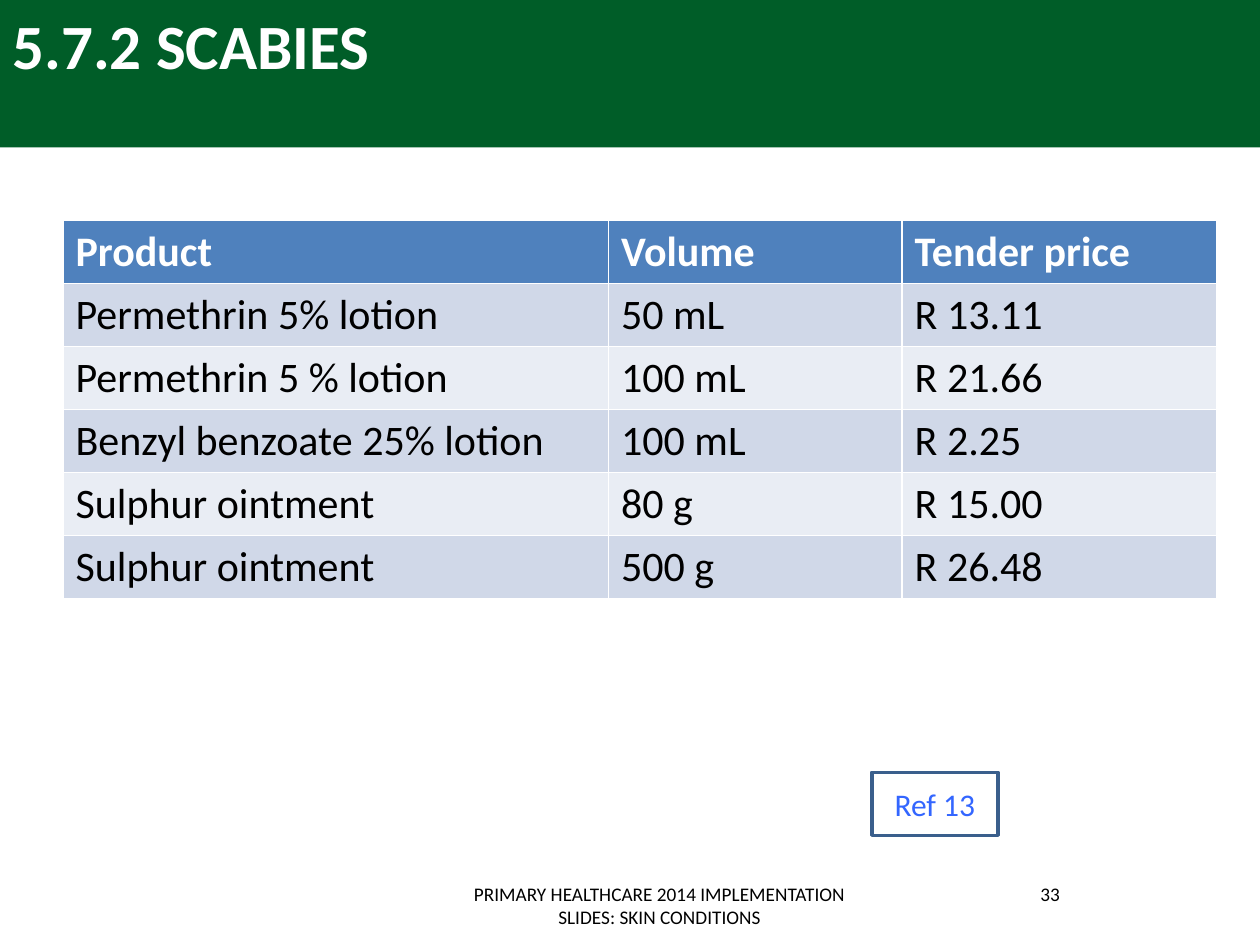
import dataclasses

import pptx
import pptx.dml.color
import pptx.enum.shapes
import pptx.enum.text
import pptx.util

SLIDE_WIDTH, SLIDE_HEIGHT = 10, 7.5
FONT = "Calibri"
COLOURS = {
    "band": "005D28",
    "header": "4F81BD",
    "odd_row": "D0D8E8",
    "even_row": "E9EDF4",
    "outline": "3A5F8C",
    "reference": "3366FF",
    "white": "FFFFFF",
    "black": "000000",
}
ALIGN = pptx.enum.text.PP_ALIGN
ANCHOR = pptx.enum.text.MSO_ANCHOR

COLUMN_WIDTHS = (4.33, 2.33, 2.5)
ROW_HEIGHT = 0.5
PRICES = (
    ("Product", "Volume", "Tender price"),
    ("Permethrin 5% lotion", "50 mL", "R 13.11"),
    ("Permethrin 5 % lotion", "100 mL", "R 21.66"),
    ("Benzyl benzoate 25% lotion", "100 mL", "R 2.25"),
    ("Sulphur ointment", "80 g", "R 15.00"),
    ("Sulphur ointment", "500 g", "R 26.48"),
)


@dataclasses.dataclass(frozen=True)
class Box:
    left: float
    top: float
    width: float
    height: float

    def emu(self) -> tuple:
        return tuple(pptx.util.Inches(value) for value in dataclasses.astuple(self))


@dataclasses.dataclass(frozen=True)
class FooterText:
    text: str
    box: Box


FOOTER_TOP, FOOTER_HEIGHT = 6.95, 0.4
FOOTERS = (
    FooterText(
        "PRIMARY HEALTHCARE 2014 IMPLEMENTATION SLIDES: SKIN CONDITIONS",
        Box(3.42, FOOTER_TOP, 3.63, FOOTER_HEIGHT),
    ),
    FooterText("33", Box(7.17, FOOTER_TOP, 2.33, FOOTER_HEIGHT)),
)


def rgb(name: str) -> pptx.dml.color.RGBColor:
    return pptx.dml.color.RGBColor.from_string(COLOURS[name])


def write(frame, text: str, *, size: float, colour: str = "black",
          bold: bool = False, align=ALIGN.LEFT, anchor=ANCHOR.TOP) -> None:
    frame.word_wrap = True
    frame.vertical_anchor = anchor
    paragraph = frame.paragraphs[0]
    paragraph.alignment = align
    run = paragraph.add_run()
    run.text = text
    run.font.name = FONT
    run.font.size = pptx.util.Pt(size)
    run.font.bold = bold
    run.font.color.rgb = rgb(colour)


def add_rectangle(slide, box: Box):
    shape = slide.shapes.add_shape(
        pptx.enum.shapes.MSO_SHAPE.RECTANGLE, *box.emu())
    shape.shadow.inherit = False
    return shape


def add_title(slide, text: str) -> None:
    band = add_rectangle(slide, Box(0, 0, SLIDE_WIDTH, 1.17))
    band.fill.solid()
    band.fill.fore_color.rgb = rgb("band")
    band.line.fill.background()
    title = slide.shapes.title
    title.element.addprevious(band.element)
    title.left, title.top, title.width, title.height = Box(0, 0, 9, 1.25).emu()
    write(title.text_frame, text, size=36, colour="white", bold=True)


def add_price_table(slide) -> None:
    box = Box(0.5, 1.75, sum(COLUMN_WIDTHS), ROW_HEIGHT * len(PRICES))
    table = slide.shapes.add_table(
        len(PRICES), len(COLUMN_WIDTHS), *box.emu()).table
    for column, width in zip(table.columns, COLUMN_WIDTHS):
        column.width = pptx.util.Inches(width)
    for row_index, values in enumerate(PRICES):
        is_header = row_index == 0
        band = "odd_row" if row_index % 2 else "even_row"
        for column_index, value in enumerate(values):
            cell = table.cell(row_index, column_index)
            cell.fill.solid()
            cell.fill.fore_color.rgb = rgb("header" if is_header else band)
            write(cell.text_frame, value, size=24, bold=is_header,
                  colour="white" if is_header else "black")


def add_reference(slide, text: str) -> None:
    shape = add_rectangle(slide, Box(6.92, 6.13, 1, 0.5))
    shape.fill.background()
    shape.line.color.rgb = rgb("outline")
    shape.line.width = pptx.util.Pt(2)
    write(shape.text_frame, text, size=18, colour="reference",
          align=ALIGN.CENTER, anchor=ANCHOR.MIDDLE)


def add_footer(slide, footer: FooterText) -> None:
    shape = slide.shapes.add_textbox(*footer.box.emu())
    write(shape.text_frame, footer.text, size=11, align=ALIGN.CENTER)


def main() -> None:
    presentation = pptx.Presentation()
    presentation.slide_width = pptx.util.Inches(SLIDE_WIDTH)
    presentation.slide_height = pptx.util.Inches(SLIDE_HEIGHT)
    title_only = presentation.slide_layouts.get_by_name("Title Only")
    slide = presentation.slides.add_slide(title_only)
    add_title(slide, "5.7.2 SCABIES")
    for footer in FOOTERS:
        add_footer(slide, footer)
    add_reference(slide, "Ref 13")
    add_price_table(slide)
    presentation.save("out.pptx")


if __name__ == "__main__":
    main()
